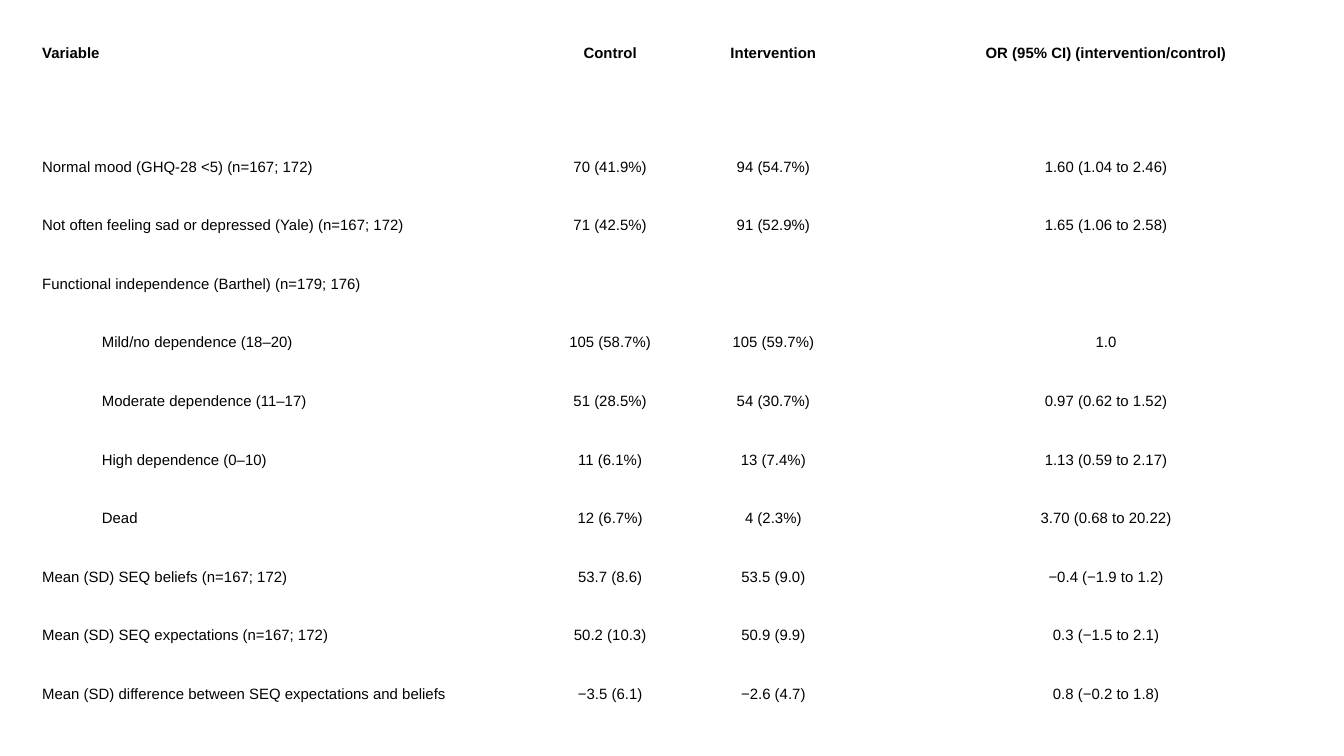
from pptx import Presentation
from pptx.dml.color import RGBColor
from pptx.enum.text import PP_ALIGN
from pptx.util import Pt

COLUMN_WIDTHS = [278, 73.4, 101.5, 255]
ROW_HEIGHT = 31.4
GAP_HEIGHT = 29.7
GAP_ROW = 1
SUBGROUP_ROWS = range(5, 9)

ROWS = [
    ["Variable", "Control", "Intervention", "OR (95% CI) (intervention/control)"],
    ["", "", "", ""],
    ["Normal mood (GHQ-28 <5) (n=167; 172)", "70 (41.9%)", "94 (54.7%)", "1.60 (1.04 to 2.46)"],
    ["Not often feeling sad or depressed (Yale) (n=167; 172)", "71 (42.5%)", "91 (52.9%)",
     "1.65 (1.06 to 2.58)"],
    ["Functional independence (Barthel) (n=179; 176)", "", "", ""],
    ["Mild/no dependence (18–20)", "105 (58.7%)", "105 (59.7%)", "1.0"],
    ["Moderate dependence (11–17)", "51 (28.5%)", "54 (30.7%)", "0.97 (0.62 to 1.52)"],
    ["High dependence (0–10)", "11 (6.1%)", "13 (7.4%)", "1.13 (0.59 to 2.17)"],
    ["Dead", "12 (6.7%)", "4 (2.3%)", "3.70 (0.68 to 20.22)"],
    ["Mean (SD) SEQ beliefs (n=167; 172)", "53.7 (8.6)", "53.5 (9.0)", "−0.4 (−1.9 to 1.2)"],
    ["Mean (SD) SEQ expectations (n=167; 172)", "50.2 (10.3)", "50.9 (9.9)", "0.3 (−1.5 to 2.1)"],
    ["Mean (SD) difference between SEQ expectations and beliefs", "−3.5 (6.1)", "−2.6 (4.7)",
     "0.8 (−0.2 to 1.8)"],
]


def color(hex_string):
    return RGBColor.from_string(hex_string)


class SlideBuilder:
    font_name = "Arial"
    font_size = 8
    text_color = "000000"
    line_spacing = 1.15
    cell_margin = 10.4
    indent = 32

    def __init__(self, slide):
        self.slide = slide

    def add_table(self, left, top, rows, widths, heights):
        shape = self.slide.shapes.add_table(
            len(rows), len(widths), Pt(left), Pt(top), Pt(sum(widths)), Pt(sum(heights)))
        table = shape.table
        table.first_row = False
        table.horz_banding = False
        for column, width in zip(table.columns, widths):
            column.width = Pt(width)
        for row, height in zip(table.rows, heights):
            row.height = Pt(height)
        for row_index, texts in enumerate(rows):
            for column_index, text in enumerate(texts):
                cell = table.cell(row_index, column_index)
                cell.fill.background()
                if text:
                    self.write_cell(cell, text, bold=row_index == 0, centered=column_index > 0)
        return table

    def write_cell(self, cell, text, bold, centered):
        cell.margin_left = cell.margin_right = Pt(self.cell_margin)
        cell.margin_top = cell.margin_bottom = Pt(self.cell_margin)
        cell.text_frame.text = text
        paragraph = cell.text_frame.paragraphs[0]
        paragraph.alignment = PP_ALIGN.CENTER if centered else PP_ALIGN.LEFT
        paragraph.line_spacing = self.line_spacing
        font = paragraph.runs[0].font
        font.name = self.font_name
        font.size = Pt(self.font_size)
        font.bold = bold
        font.color.rgb = color(self.text_color)

    def indent_cell(self, cell):
        properties = cell.text_frame.paragraphs[0]._p.get_or_add_pPr()
        properties.set("marL", str(Pt(self.indent)))
        properties.set("indent", "0")


def main():
    presentation = Presentation()
    presentation.slide_width = Pt(720)
    presentation.slide_height = Pt(405)
    builder = SlideBuilder(presentation.slides.add_slide(presentation.slide_layouts[6]))

    # Results table
    heights = [GAP_HEIGHT if index == GAP_ROW else ROW_HEIGHT for index in range(len(ROWS))]
    table = builder.add_table(12.2, 12.2, ROWS, COLUMN_WIDTHS, heights)

    # Empty band below the header
    table.cell(GAP_ROW, 0).merge(table.cell(GAP_ROW, len(COLUMN_WIDTHS) - 1))

    # Dependence levels sit under functional independence
    for row_index in SUBGROUP_ROWS:
        builder.indent_cell(table.cell(row_index, 0))

    presentation.save("out.pptx")


if __name__ == "__main__":
    main()
